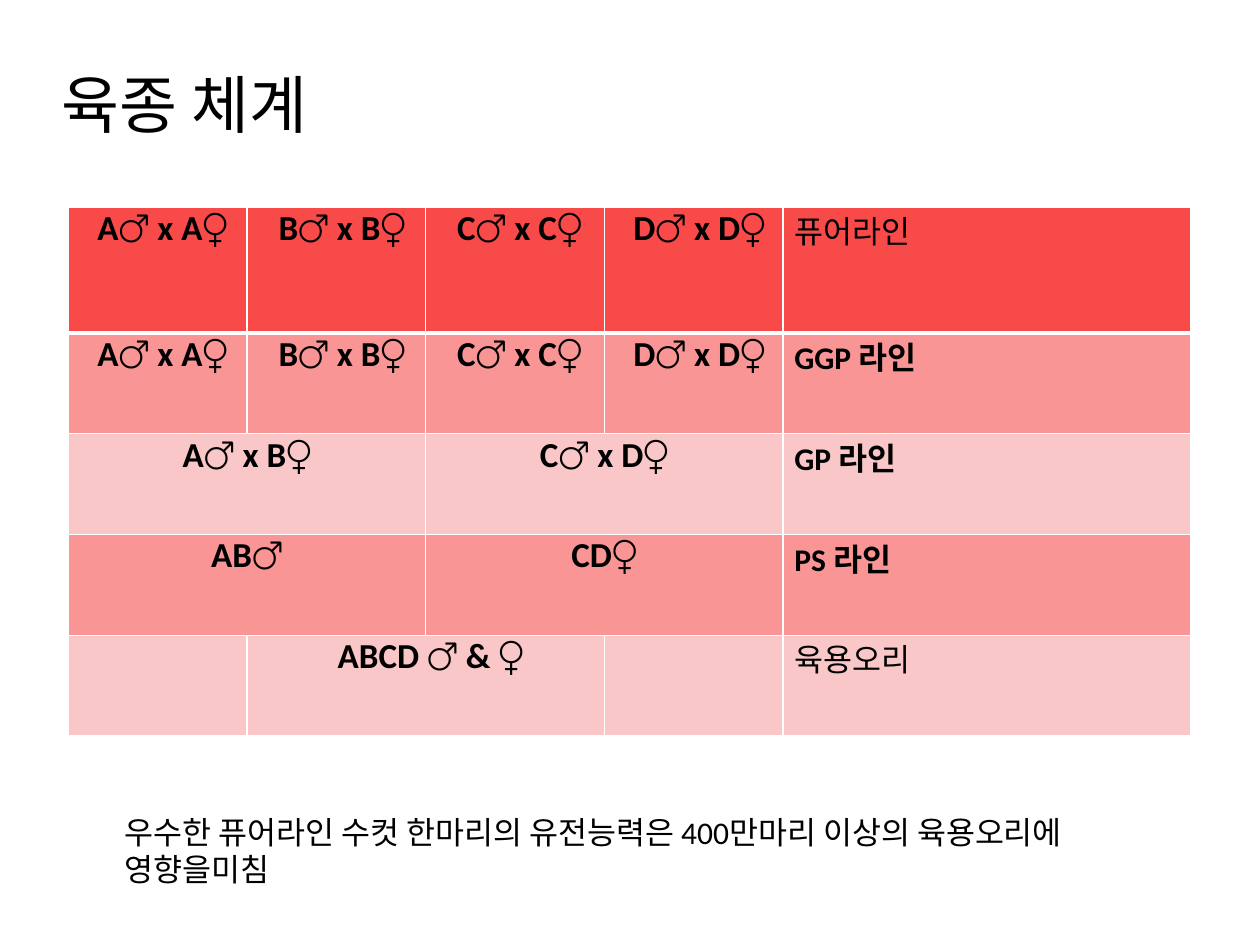
from itertools import groupby

from lxml import etree
from pptx import Presentation
from pptx import util as u
from pptx.dml.color import RGBColor
from pptx.enum import text
from pptx.oxml import ns

HUES = {"ink": "000000", "rule": "FFFFFF", "head": "F94A4A", "mid": "F99595", "pale": "F9C7C7"}
SIGNS = "♂♀"
PURE = [(f"{c}♂ x {c}♀", pad) for c, pad in zip("ABCD", (16.6, 18, 18, 16.6))]
CROSS = [
    ("head", 72, PURE, ("퓨어라인", False)),
    ("mid", 57.6, PURE, ("GGP 라인", True)),
    ("pale", 57.6, [("A♂ x B♀", None), None, ("C♂ x D♀", None), None], ("GP 라인", True)),
    ("mid", 57.6, [("AB♂", None), None, ("CD♀", None), None], ("PS 라인", True)),
    ("pale", 57.6, [("", 0), ("ABCD ♂ & ♀", 51.8), None, ("", 0)], ("육용오리", False)),
]


class Deck:
    """Holds the style and the current slide."""

    def __init__(self, wide, high):
        self.prs = Presentation()
        self.put(self.prs, slide_width=u.Pt(wide), slide_height=u.Pt(high))
        self.slide = self.prs.slides.add_slide(self.prs.slide_layouts[6])

    def put(self, item, **vals):
        for key, val in vals.items():
            setattr(item, key, val)

    def tint(self, name):
        return RGBColor.from_string(HUES[name])

    def words(self, frame, line, size, bold=False, align=text.PP_ALIGN.LEFT):
        para = frame.paragraphs[0]
        para.alignment = align
        para.font.size = u.Pt(size)
        for sign, part in groupby(line, lambda c: c in SIGNS):
            run = para.add_run()
            run.text = "".join(part)
            face = "Karla" if sign else "Calibri"
            self.put(run.font, name=face, size=u.Pt(size), bold=bold)
            run.font.color.rgb = self.tint("ink")

    def label(self, line, box, size):
        frame = self.slide.shapes.add_textbox(*map(u.Pt, box)).text_frame
        self.put(frame, word_wrap=True, margin_left=0, margin_top=0, margin_right=0, margin_bottom=0)
        self.words(frame, line, size)

    def edge(self, cell, row):
        props = cell._tc.get_or_add_tcPr()
        wide = {"L": 1, "R": 1, "T": 3 if row == 1 else 1, "B": 3 if row == 0 else 1}
        for spot, (side, width) in enumerate(wide.items()):
            line = etree.Element(ns.qn(f"a:ln{side}"), w=str(u.Pt(width)))
            fill = etree.SubElement(line, ns.qn("a:solidFill"))
            etree.SubElement(fill, ns.qn("a:srgbClr"), val=HUES["rule"])
            props.insert(spot, line)

    def cell(self, cell, row, hue, pad):
        self.put(cell, margin_left=u.Pt(pad or 0), margin_top=0, margin_right=0, margin_bottom=0)
        cell.fill.solid()
        cell.fill.fore_color.rgb = self.tint(hue)
        self.edge(cell, row)

    def table(self, rows, cols, left, top):
        high = sum(row[1] for row in rows)
        box = map(u.Pt, (left, top, sum(cols), high))
        grid = self.slide.shapes.add_table(len(rows), len(cols), *box).table
        self.put(grid, first_row=False, horz_banding=False)
        for col, width in zip(grid.columns, cols):
            col.width = u.Pt(width)
        for r, (hue, height, pairs, (name, bold)) in enumerate(rows):
            grid.rows[r].height = u.Pt(height)
            for c, pair in enumerate(pairs):
                cell = grid.cell(r, c)
                line, pad = pair or ("", 0)
                self.cell(cell, r, hue, pad)
                if pair is None:
                    grid.cell(r, c - 1).merge(cell)
                else:
                    align = text.PP_ALIGN.CENTER if pad is None else text.PP_ALIGN.LEFT
                    self.words(cell.text_frame, line, 20, True, align)
            last = grid.cell(r, len(pairs))
            self.cell(last, r, hue, 6.5)
            self.words(last.text_frame, name, 18, bold)


def main():
    deck = Deck(720, 540)
    deck.label("육종 체계", (35.3, 37.4, 651, 44), 36)
    deck.table(CROSS, [102.1] * 4 + [233.2], 39.1, 118.2)
    deck.label("우수한 퓨어라인 수컷 한마리의 유전능력은 400만마리 이상의 육용오리에 영향을미침",
               (71, 464.4, 590, 44), 18)
    deck.prs.save("out.pptx")


if __name__ == "__main__":
    main()
